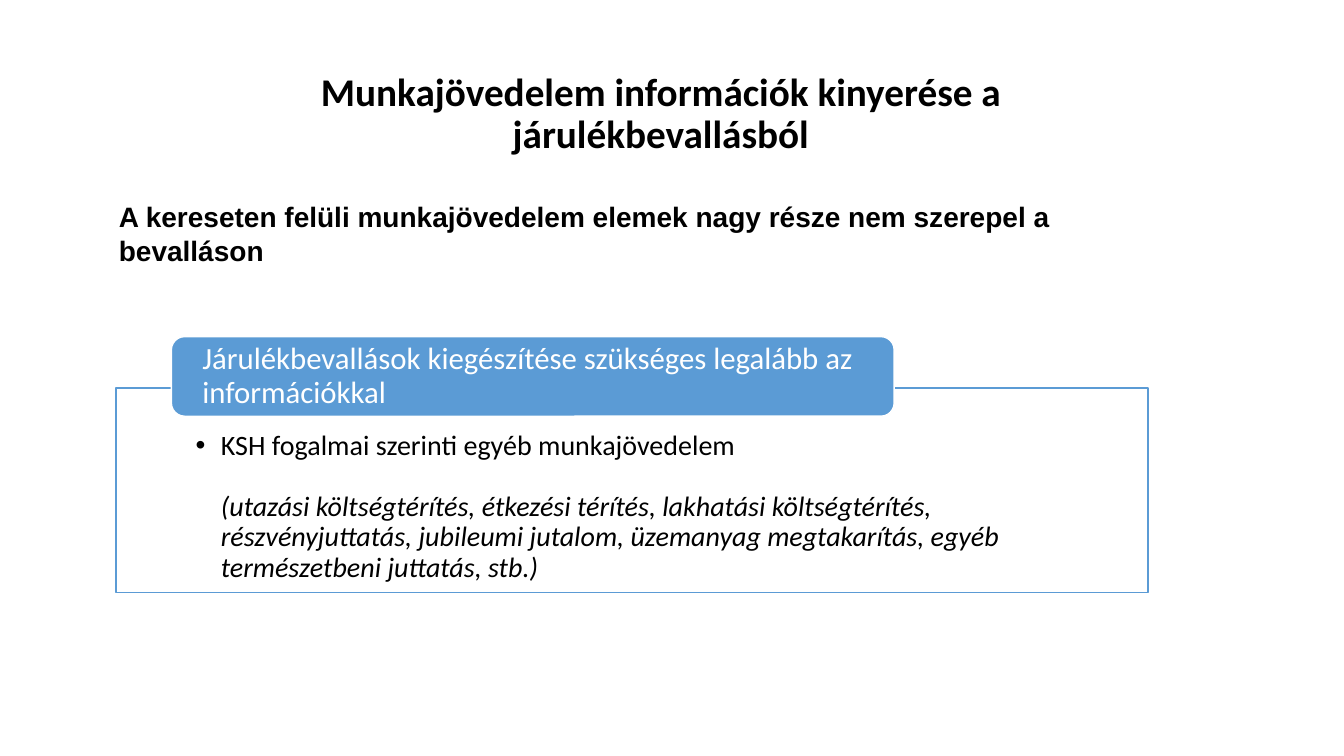
from lxml.etree import SubElement
from pptx import Presentation
from pptx.dml.color import RGBColor
from pptx.enum.shapes import MSO_SHAPE
from pptx.enum.text import MSO_ANCHOR, PP_ALIGN
from pptx.oxml.ns import qn
from pptx.util import Inches, Pt

BLACK = RGBColor(0x00, 0x00, 0x00)
WHITE = RGBColor(0xFF, 0xFF, 0xFF)
BLUE = RGBColor(0x5B, 0x9B, 0xD5)


def write(paragraph, text, *, size=20, font="Calibri", color=BLACK, bold=False,
          italic=False, align=PP_ALIGN.LEFT, spacing=0.9, before=0):
    """Put formatted text into a paragraph."""
    paragraph.alignment = align
    paragraph.line_spacing = spacing
    paragraph.space_before = Pt(before)
    run = paragraph.add_run()
    run.text = text
    run.font.name, run.font.size = font, Pt(size)
    run.font.bold, run.font.italic = bold, italic
    run.font.color.rgb = color


def indent(paragraph, left, bullet=None):
    """Indent a paragraph, hanging its bullet if it has one."""
    props = paragraph._p.get_or_add_pPr()
    props.set("marL", str(Inches(left)))
    props.set("indent", str(-Inches(left) if bullet else 0))
    if bullet:
        SubElement(props, qn("a:buFont"), typeface="Arial")
        SubElement(props, qn("a:buChar"), char=bullet)
    else:
        SubElement(props, qn("a:buNone"))


class SlideBuilder:
    """Places elements by percentages of the slide's width and height."""

    def __init__(self, deck):
        self.deck = deck
        self.slide = deck.slides.add_slide(deck.slide_layouts[6])

    def area(self, left, top, width, height):
        across, down = self.deck.slide_width / 100, self.deck.slide_height / 100
        return (round(left * across), round(top * down),
                round(width * across), round(height * down))

    def frame(self, shape, anchor, insets):
        frame = shape.text_frame
        frame.word_wrap = True
        frame.vertical_anchor = anchor
        (frame.margin_left, frame.margin_top,
         frame.margin_right, frame.margin_bottom) = map(Inches, insets)
        return frame

    def text(self, area, content, anchor=MSO_ANCHOR.TOP, **style):
        box = self.slide.shapes.add_textbox(*self.area(*area))
        frame = self.frame(box, anchor, (0.1, 0.05, 0.1, 0.05))
        write(frame.paragraphs[0], content, **style)

    def block(self, area, kind, fill, line, anchor, insets, opacity=100):
        shape = self.slide.shapes.add_shape(kind, *self.area(*area))
        shape.shadow.inherit = False
        shape.fill.solid()
        shape.fill.fore_color.rgb = fill
        if opacity < 100:
            color = shape._element.spPr.find(qn("a:solidFill"))[0]
            SubElement(color, qn("a:alpha"), val=str(opacity * 1000))
        shape.line.color.rgb = line
        shape.line.width = Pt(1)
        return self.frame(shape, anchor, insets)


def main():
    deck = Presentation()
    deck.slide_width, deck.slide_height = Inches(13.33), Inches(7.5)
    page = SlideBuilder(deck)

    # Title
    page.text((15.15, 9.07, 68.03, 12.27),
              "Munkajövedelem információk kinyerése a járulékbevallásból",
              anchor=MSO_ANCHOR.MIDDLE, size=28, bold=True, align=PP_ALIGN.CENTER)

    # Outlined panel with the missing income items
    panel = page.block((8.63, 51.33, 76.8, 27.07), MSO_SHAPE.RECTANGLE, WHITE, BLUE,
                       MSO_ANCHOR.TOP, (0.79, 0.43, 0.79, 0.16), opacity=90)
    concept, examples = panel.paragraphs[0], panel.add_paragraph()
    indent(concept, 0.25, bullet="•")
    write(concept, "KSH fogalmai szerinti egyéb munkajövedelem")
    indent(examples, 0.25)
    write(examples,
          "(utazási költségtérítés, étkezési térítés, lakhatási költségtérítés, "
          "részvényjuttatás, jubileumi jutalom, üzemanyag megtakarítás, egyéb "
          "természetbeni juttatás, stb.)", italic=True, before=22)

    # Heading tab over the panel's top edge
    heading = page.block((12.75, 44.53, 53.78, 10.53), MSO_SHAPE.ROUNDED_RECTANGLE,
                         BLUE, WHITE, MSO_ANCHOR.MIDDLE, (0.27, 0, 0.27, 0))
    write(heading.paragraphs[0],
          "Járulékbevallások kiegészítése szükséges legalább az információkkal",
          size=22, color=WHITE)

    # Lead statement
    page.text((8.1, 25.73, 76.8, 10.27),
              "A kereseten felüli munkajövedelem elemek nagy része nem szerepel a "
              "bevalláson", font="Arial", bold=True, spacing=1.0)

    deck.save("out.pptx")


if __name__ == "__main__":
    main()
